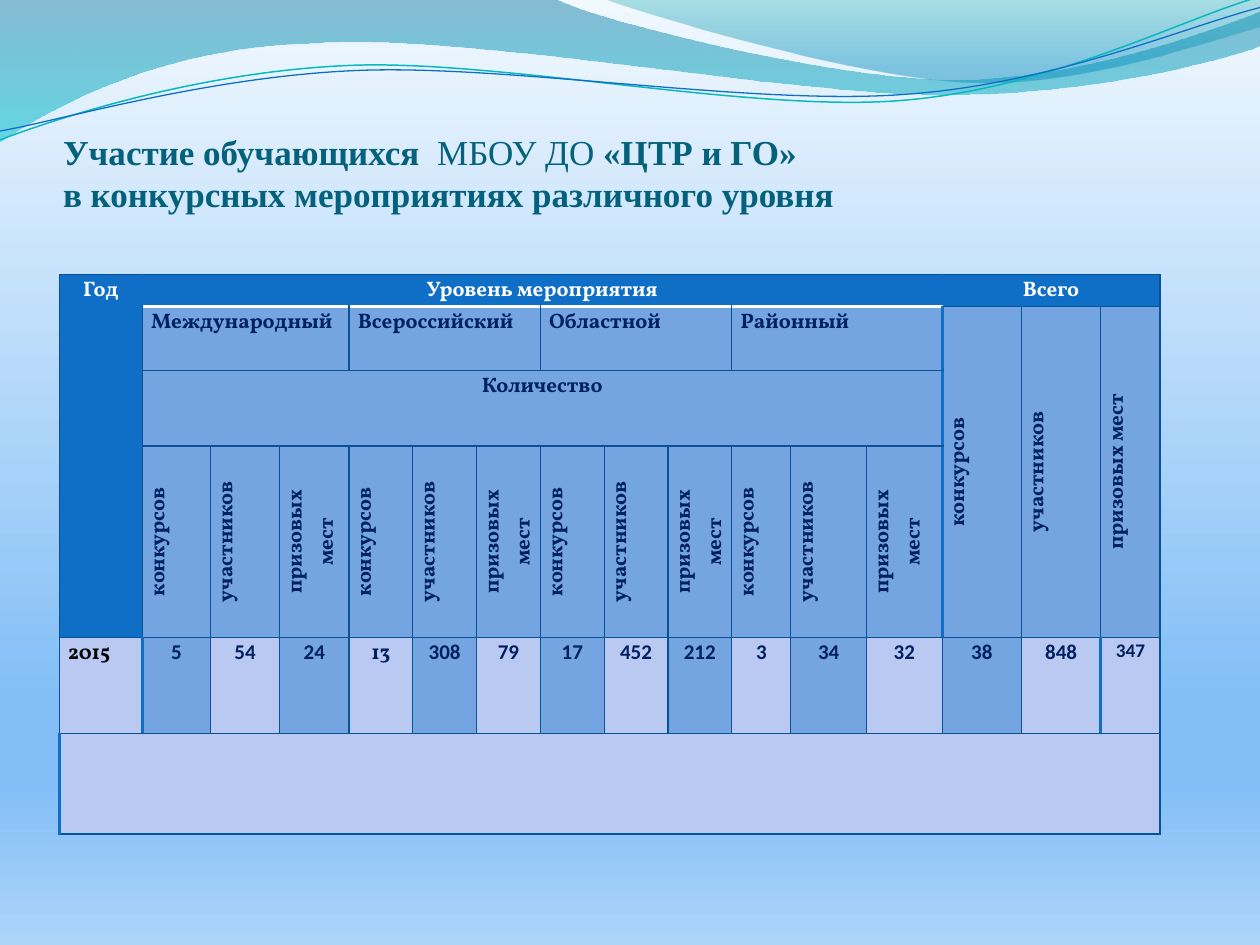
from lxml import etree
from pptx import Presentation
from pptx.dml.color import RGBColor
from pptx.enum.text import MSO_ANCHOR, PP_ALIGN
from pptx.oxml.ns import qn
from pptx.util import Inches, Pt

LEFT, CENTER = PP_ALIGN.LEFT, PP_ALIGN.CENTER
BOTTOM = MSO_ANCHOR.BOTTOM

THEME = {
    "title": "04617B", "header": "0F6FC6", "middle": "75A5E0", "light": "BAC9F2",
    "navy": "002060", "white": "FFFFFF", "black": "000000", "border": "095295",
    "title_font": "Times New Roman", "text_font": "Vollkorn", "number_font": "Calibri",
    "title_size": 20, "text_size": 12, "small_size": 11,
}
BACKGROUND = [(0, "F1F8FE", 100), (74, "83BFF6", 100), (83, "83BFF6", 100), (100, "ACD4F9", 100)]

FILLED_WAVES = [
    ([[(0, 0)],
      [(4.4, -0.01)],
      [(4.76, 0.17), (6.64, 0.63), (7.58, 0.63)],
      [(8.53, 0.63), (9.58, 0.26), (10, 0.09)],
      [(10.01, 0.36)],
      [(9.83, 0.44), (8.7, 0.76), (7.46, 0.75)],
      [(6.22, 0.75), (3.82, 0.28), (2.57, 0.34)],
      [(1.29, 0.36), (0.46, 0.83), (-0.01, 1.13)]],
     [(0, "0074A1", 45), (100, "00C6CF", 55)]),
    ([[(4.79, -0.01)],
      [(5.09, 0.11), (6.82, 0.62), (7.69, 0.65)],
      [(8.56, 0.69), (9.61, 0.32), (10, 0.21)],
      [(10, 0)]],
     [(0, "00A1A9", 30), (80, "008BBF", 45)]),
]
LINE_WAVES = [
    ([[(0, 1.11)],
      [(0.48, 0.93), (1.58, 0.57), (2.77, 0.52)],
      [(3.95, 0.47), (5.93, 0.89), (7.13, 0.8)],
      [(8.33, 0.71), (9.38, 0.15), (9.98, -0.02)]], "0AB8BF", 0.85),
    ([[(0, 1.04)],
      [(0.47, 0.96), (1.64, 0.61), (2.83, 0.56)],
      [(4.03, 0.51), (5.97, 0.84), (7.17, 0.75)],
      [(8.36, 0.67), (9.41, 0.21), (10, 0.06)]], "0F6FC6", 0.75),
]

TITLE_LINES = [
    [("Участие обучающихся ", True), (" МБОУ ДО ", False), ("«ЦТР и ГО»", True)],
    [("в конкурсных мероприятиях различного уровня", True)],
]
LEVELS = ["Международный", "Всероссийский", "Областной", "Районный"]
MEASURES = ["конкурсов", "участников", "призовых мест"]
YEAR = "2015"
RESULTS = [5, 54, 24, 13, 308, 79, 17, 452, 212, 3, 34, 32, 38, 848, 347]
COLUMNS = [0.66, 0.54, 0.55, 0.55] + [1.52 / 3] * 6 + [0.47, 0.6, 0.6, 0.63, 0.63, 0.47]
ROWS = [0.25, 0.51, 0.6, 1.52, 0.76, 0.8]
TOTAL_COLUMN = 1 + len(LEVELS) * len(MEASURES)

ACCENTS = {("h", 1, column): ("white", 2) for column in range(1, TOTAL_COLUMN)}
ACCENTS.update({("v", 0, column): ("header", 0.75) for column in (1, TOTAL_COLUMN)})
ACCENTS.update({("v", row, TOTAL_COLUMN): ("header", 2) for row in (1, 2, 3)})
ACCENTS.update({("v", row, column): ("header", 2) for row, column in [(4, 1), (4, 15), (5, 0)]})


def rgb(value):
    return RGBColor.from_string(THEME.get(value, value))


def add_gradient(fill, element, stops):
    fill.gradient()
    fill.gradient_angle = 270
    stop_list = element.xpath(".//a:gsLst")[0]
    for old_stop in list(stop_list):
        stop_list.remove(old_stop)
    for position, color, opacity in stops:
        stop = etree.SubElement(stop_list, qn("a:gs"), pos=str(position * 1000))
        tint = etree.SubElement(stop, qn("a:srgbClr"), val=color)
        if opacity < 100:
            etree.SubElement(tint, qn("a:alpha"), val=str(opacity * 1000))


def add_wave(page, segments, close):
    ends = [(Inches(x), Inches(y)) for x, y in (segment[-1] for segment in segments)]
    builder = page.shapes.build_freeform(*ends[0])
    builder.add_line_segments(ends[1:], close=close)
    wave = builder.convert_to_shape()
    wave.shadow.inherit = False
    for line, segment in zip(wave.element.xpath(".//a:lnTo"), segments[1:]):
        if len(segment) == 3:
            curve = etree.Element(qn("a:cubicBezTo"))
            for x, y in segment:
                etree.SubElement(curve, qn("a:pt"), x=str(Inches(x) - wave.left), y=str(Inches(y) - wave.top))
            line.getparent().replace(line, curve)
    return wave


def add_waves(page):
    for segments, stops in FILLED_WAVES:
        wave = add_wave(page, segments, True)
        add_gradient(wave.fill, wave.element, stops)
        wave.line.fill.background()
    for segments, color, width in LINE_WAVES:
        wave = add_wave(page, segments, False)
        wave.fill.background()
        wave.line.color.rgb = rgb(color)
        wave.line.width = Pt(width)


def format_title(page):
    title = page.shapes.title
    page.shapes.element.append(title.element)
    title.left, title.top, title.width, title.height = map(Inches, (0.5, 0.68, 9, 1.02))
    frame = title.text_frame
    frame.word_wrap = True
    frame.vertical_anchor = BOTTOM
    frame.margin_left = frame.margin_right = frame.margin_bottom = 0
    para = frame.paragraphs[0]
    para.alignment = LEFT
    for number, line in enumerate(TITLE_LINES):
        if number:
            para.add_line_break()
        for text, bold in line:
            span = para.add_run()
            span.text = text
            span.font.bold = bold
            span.font.name = THEME["title_font"]
            span.font.size = Pt(THEME["title_size"])
            span.font.color.rgb = rgb("title")


def add_borders(cell, row, column):
    properties = cell._tc.get_or_add_tcPr()
    edges = {"L": ("v", row, column), "R": ("v", row, column + 1),
             "T": ("h", row, column), "B": ("h", row + 1, column)}
    for side, edge in edges.items():
        color, width = ACCENTS.get(edge, ("border", 0.75))
        line = etree.SubElement(properties, qn(f"a:ln{side}"), w=str(Pt(width)))
        fill = etree.SubElement(line, qn("a:solidFill"))
        etree.SubElement(fill, qn("a:srgbClr"), val=THEME[color])


def write(cell, text, fill, color="navy", align=CENTER, font="text_font", size="text_size", upright=False):
    cell.fill.solid()
    cell.fill.fore_color.rgb = rgb(fill)
    para = cell.text_frame.paragraphs[0]
    para.text = text
    para.alignment = align
    para.line_spacing = 1.07
    if upright:
        cell._tc.get_or_add_tcPr().set("vert", "vert270")
        for margin in ("marL", "marR"):
            para._p.get_or_add_pPr().set(margin, str(Inches(0.08)))
    for span in para.runs:
        span.font.name = THEME[font]
        span.font.size = Pt(THEME[size])
        span.font.bold = True
        span.font.color.rgb = rgb(color)


def add_results_table(page):
    frame = page.shapes.add_table(len(ROWS), len(COLUMNS), Inches(0.47), Inches(2.18),
                                  Inches(sum(COLUMNS)), Inches(sum(ROWS)))
    table = frame.table
    table.first_row = table.horz_banding = False
    for column, width in zip(table.columns, COLUMNS):
        column.width = Inches(width)
    for row, height in zip(table.rows, ROWS):
        row.height = Inches(height)
    for row in range(len(ROWS)):
        for column in range(len(COLUMNS)):
            cell = table.cell(row, column)
            cell.margin_left = cell.margin_right = Inches(0.07)
            cell.margin_top = cell.margin_bottom = 0
            add_borders(cell, row, column)

    def merge(row, column, last_row, last_column):
        cell = table.cell(row, column)
        cell.merge(table.cell(last_row, last_column))
        return cell

    last = len(COLUMNS) - 1
    write(merge(0, 0, 3, 0), "Год", "header", "white")
    write(merge(0, 1, 0, TOTAL_COLUMN - 1), "Уровень мероприятия", "header", "white")
    write(merge(0, TOTAL_COLUMN, 0, last), "Всего", "header", "white")
    write(merge(2, 1, 2, TOTAL_COLUMN - 1), "Количество", "middle")
    for number, level in enumerate(LEVELS):
        start = 1 + number * len(MEASURES)
        write(merge(1, start, 1, start + 2), level, "middle", align=LEFT)
    for column, value in enumerate(RESULTS, start=1):
        heading = table.cell(3, column) if column < TOTAL_COLUMN else merge(1, column, 3, column)
        write(heading, MEASURES[(column - 1) % len(MEASURES)], "middle", upright=True)
        shaded = column % 2 and column < last
        write(table.cell(4, column), str(value), "middle" if shaded else "light",
              font="text_font" if value == 13 else "number_font",
              size="small_size" if column == last else "text_size")
    write(table.cell(4, 0), YEAR, "light", "black", LEFT)
    write(merge(5, 0, 5, last), "", "light")


def main():
    deck = Presentation()
    deck.slide_width, deck.slide_height = Inches(10), Inches(7.5)
    page = deck.slides.add_slide(deck.slide_layouts[5])
    add_gradient(page.background.fill, page.element, BACKGROUND)
    add_waves(page)
    format_title(page)
    add_results_table(page)
    deck.save("out.pptx")


if __name__ == "__main__":
    main()
